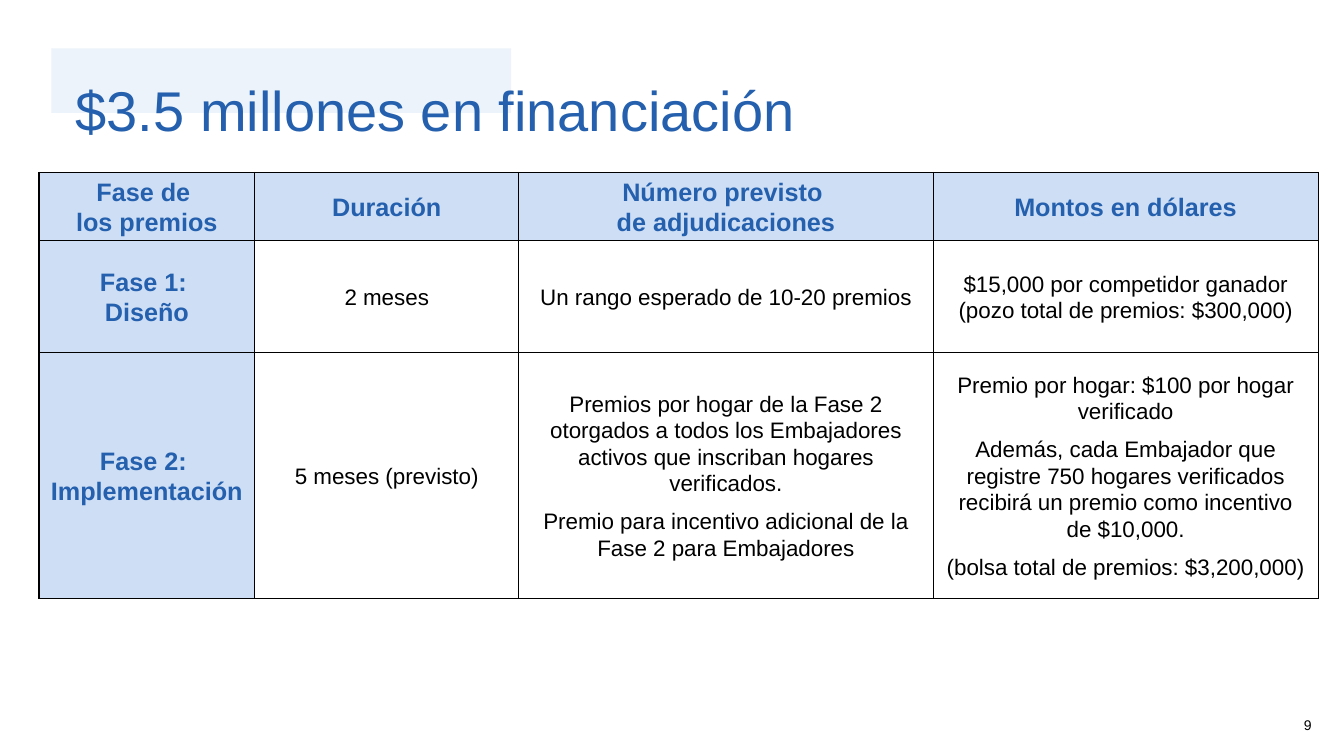
from dataclasses import dataclass

from lxml import etree
from pptx import Presentation
from pptx import util as u
from pptx.dml.color import RGBColor
from pptx.enum import shapes, text
from pptx.oxml import ns


@dataclass(frozen=True)
class Theme:
    font: str = "Arial"
    blue: str = "2460AD"
    header: str = "CDDEF5"
    band: str = "ECF3FA"
    ink: str = "000000"
    paper: str = "FFFFFF"
    title_size: int = 40
    label_size: int = 18
    body_size: int = 16
    number_size: int = 10


@dataclass(frozen=True)
class Box:
    """Percentages of the slide's width and height."""
    left: float
    top: float
    width: float
    height: float


@dataclass(frozen=True)
class TextStyle:
    size: int
    color: str
    bold: bool = False
    align: text.PP_ALIGN = text.PP_ALIGN.CENTER
    spacing: float = 1.0
    after: int = 0


@dataclass(frozen=True)
class CellStyle:
    fill: str
    text: TextStyle


T = Theme()
TITLE = TextStyle(T.title_size, T.blue, align=text.PP_ALIGN.LEFT, spacing=0.9)
NUMBER = TextStyle(T.number_size, T.ink, align=text.PP_ALIGN.RIGHT)
LABEL = CellStyle(T.header, TextStyle(T.label_size, T.blue, True, spacing=1.07, after=8))
BODY = CellStyle(T.paper, TextStyle(T.body_size, T.ink, spacing=1.07, after=8))

BAND_BOX = Box(3.83, 6.4, 34.2, 8.53)
TITLE_BOX = Box(4.88, 7.07, 57.68, 15.73)
NUMBER_BOX = Box(73.35, 94.13, 24.98, 3.6)
COLUMNS = (16.05, 19.65, 30.83, 28.65)
ROWS = (9.07, 14.8, 32.53)
TABLE_BOX = Box(2.9, 22.8, sum(COLUMNS), sum(ROWS))

# One list of paragraphs per cell
PRIZES = [
    [["Fase de \nlos premios"], ["Duración"],
     ["Número previsto \nde adjudicaciones"], ["Montos en dólares"]],
    [["Fase 1: \nDiseño"], ["2 meses"], ["Un rango esperado de 10-20 premios"],
     ["$15,000 por competidor ganador (pozo total de premios: $300,000)"]],
    [["Fase 2: \nImplementación"], ["5 meses (previsto)"],
     ["Premios por hogar de la Fase 2 otorgados a todos los Embajadores activos "
      "que inscriban hogares verificados.",
      "Premio para incentivo adicional de la Fase 2 para Embajadores"],
     ["Premio por hogar: $100 por hogar verificado",
      "Además, cada Embajador que registre 750 hogares verificados recibirá un "
      "premio como incentivo de $10,000.",
      "(bolsa total de premios: $3,200,000)"]],
]

prs = Presentation()
prs.slide_width, prs.slide_height = u.Inches(13.33), u.Inches(7.5)


def across(share: float) -> int:
    return int(prs.slide_width * share / 100)


def down(share: float) -> int:
    return int(prs.slide_height * share / 100)


def place(box: Box) -> tuple[int, int, int, int]:
    return across(box.left), down(box.top), across(box.width), down(box.height)


def write(tf, paragraphs: list[str], style: TextStyle) -> None:
    tf.word_wrap = True
    for i, line in enumerate(paragraphs):
        p = tf.add_paragraph() if i else tf.paragraphs[0]
        p.text = line
        layout = {"alignment": style.align, "line_spacing": style.spacing,
                  "space_before": u.Pt(0), "space_after": u.Pt(style.after)}
        for name, value in layout.items():
            setattr(p, name, value)
        for r in p.runs:
            look = {"name": T.font, "size": u.Pt(style.size), "bold": style.bold}
            for name, value in look.items():
                setattr(r.font, name, value)
            r.font.color.rgb = RGBColor.from_string(style.color)


def add_borders(cell) -> None:
    tc_pr = cell._tc.get_or_add_tcPr()
    for i, side in enumerate(("lnL", "lnR", "lnT", "lnB")):
        ln = etree.Element(ns.qn(f"a:{side}"), w=str(u.Pt(1)))
        fill = etree.SubElement(ln, ns.qn("a:solidFill"))
        etree.SubElement(fill, ns.qn("a:srgbClr"), val=T.ink)
        tc_pr.insert(i, ln)


def fill_cell(cell, paragraphs: list[str], style: CellStyle) -> None:
    frame = {"vertical_anchor": text.MSO_ANCHOR.MIDDLE,
             "margin_left": u.Inches(0.1), "margin_right": u.Inches(0.1),
             "margin_top": 0, "margin_bottom": 0}
    for name, value in frame.items():
        setattr(cell, name, value)
    write(cell.text_frame, paragraphs, style.text)
    cell.fill.solid()
    cell.fill.fore_color.rgb = RGBColor.from_string(style.fill)
    add_borders(cell)


def add_band(s) -> None:
    """Draw the pale band behind the title."""
    sp = s.shapes.add_shape(shapes.MSO_SHAPE.RECTANGLE, *place(BAND_BOX))
    sp.shadow.inherit = False
    sp.fill.solid()
    sp.fill.fore_color.rgb = RGBColor.from_string(T.band)
    sp.line.fill.background()
    s.shapes.title._element.addprevious(sp._element)


def add_title(s, words: str) -> None:
    sp = s.shapes.title
    sp.left, sp.top, sp.width, sp.height = place(TITLE_BOX)
    sp.text_frame.auto_size = text.MSO_AUTO_SIZE.NONE
    sp.text_frame.vertical_anchor = text.MSO_ANCHOR.MIDDLE
    write(sp.text_frame, [words], TITLE)


def add_page_number(s, number: str) -> None:
    tf = s.shapes.add_textbox(*place(NUMBER_BOX)).text_frame
    tf.vertical_anchor = text.MSO_ANCHOR.MIDDLE
    write(tf, [number], NUMBER)


def add_prize_table(s) -> None:
    table = s.shapes.add_table(len(ROWS), len(COLUMNS), *place(TABLE_BOX)).table
    table.horz_banding = False
    for column, share in zip(table.columns, COLUMNS):
        column.width = across(share)
    for row, share in zip(table.rows, ROWS):
        row.height = down(share)
    for i, row in enumerate(PRIZES):
        for j, paragraphs in enumerate(row):
            fill_cell(table.cell(i, j), paragraphs, BODY if i and j else LABEL)


def main() -> None:
    s = prs.slides.add_slide(prs.slide_layouts[5])
    add_band(s)
    add_page_number(s, "9")
    add_title(s, "$3.5 millones en financiación")
    add_prize_table(s)
    prs.save("out.pptx")


if __name__ == "__main__":
    main()
